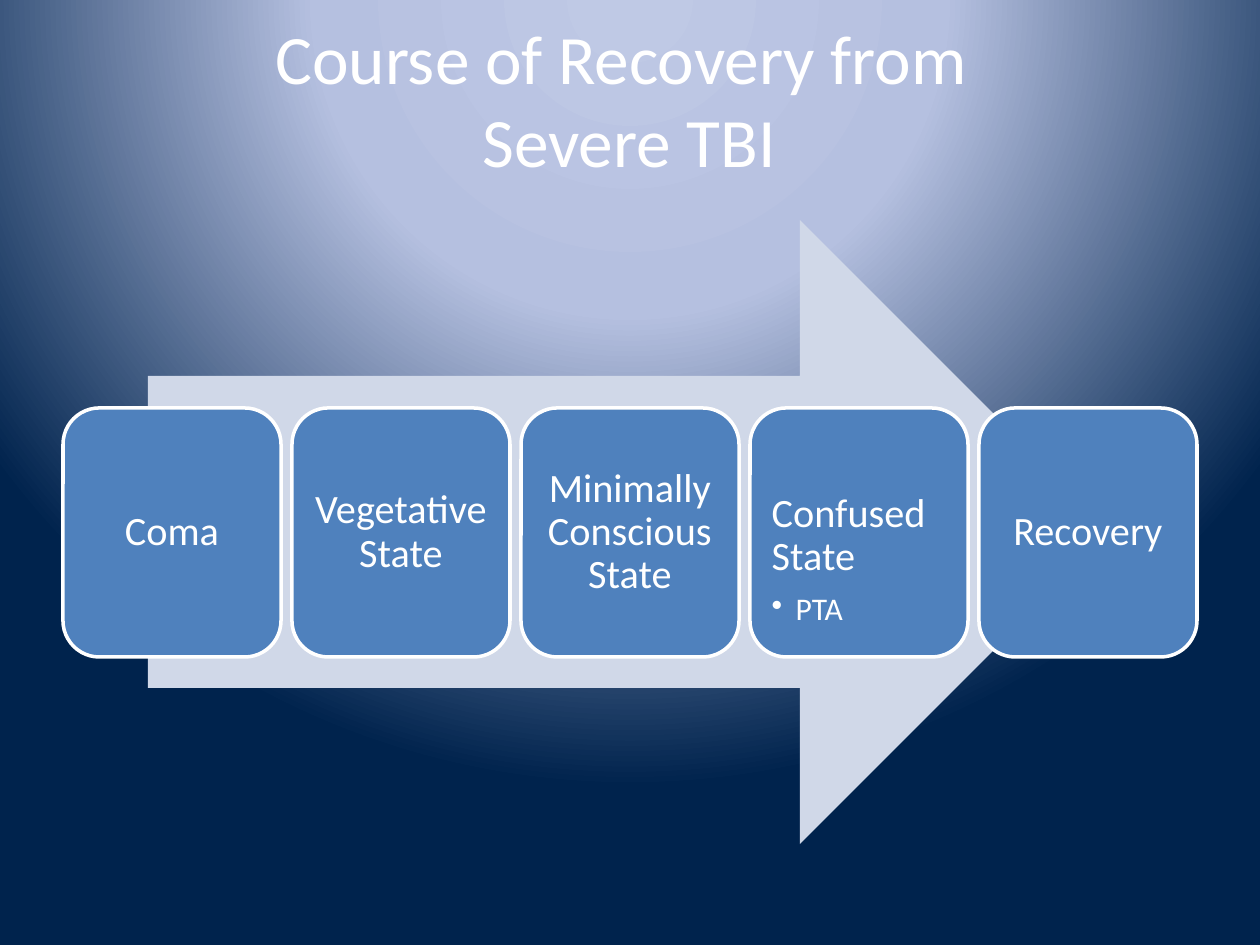
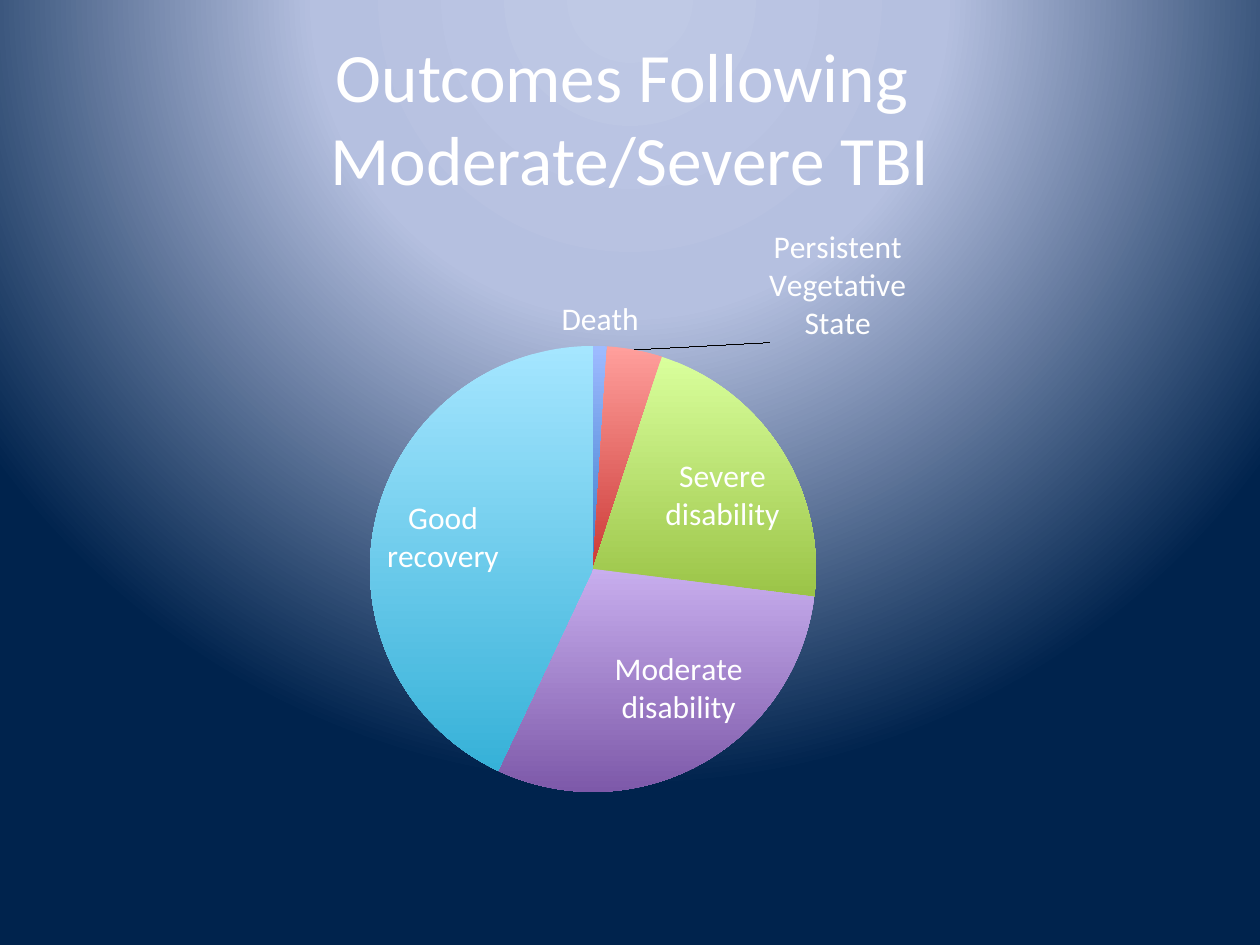
from dataclasses import dataclass

from lxml import etree
from pptx import Presentation
from pptx.chart.data import CategoryChartData
from pptx.dml.color import RGBColor
from pptx.enum.chart import XL_CHART_TYPE, XL_LABEL_POSITION
from pptx.enum.shapes import MSO_SHAPE
from pptx.enum.text import MSO_ANCHOR, MSO_AUTO_SIZE, PP_ALIGN
from pptx.oxml.ns import qn
from pptx.util import Emu, Pt

LEFT, CENTER = PP_ALIGN.LEFT, PP_ALIGN.CENTER
TOP, MIDDLE = MSO_ANCHOR.TOP, MSO_ANCHOR.MIDDLE
FIXED = MSO_AUTO_SIZE.NONE
ARROW, ROUND = MSO_SHAPE.RIGHT_ARROW, MSO_SHAPE.ROUNDED_RECTANGLE
PIE = XL_CHART_TYPE.PIE
BEST, OUTSIDE = XL_LABEL_POSITION.BEST_FIT, XL_LABEL_POSITION.OUTSIDE_END


@dataclass(frozen=True)
class Theme:
    font: str = "Calibri"
    ink: str = "FFFFFF"
    box: str = "4F81BD"
    arrow: str = "D0D8E8"
    glow: tuple = ((0, "BFC9E5"), (40, "B5C0E0"), (100, "00234D"))
    head: float = 39.6
    step: int = 23
    note: int = 18
    edge: int = 2


THEME = Theme()

COURSE = "Course of Recovery from \nSevere TBI"
STEPS = [
    ("Coma", None),
    ("Vegetative State", None),
    ("Minimally Conscious State", None),
    ("Confused State", "PTA"),
    ("Recovery", None),
]
RESULT = "Outcomes Following \nModerate/Severe TBI"
PARTS = [
    ("Death", 1, "9EBBFF", "3A7CCB"),
    ("Vegetative state", 4, "FF9F9C", "CC3A36"),
    ("Severe disability", 22, "D9FF9C", "9BC447"),
    ("Moderate disability", 30, "C8AEEE", "7D59A9"),
    ("Good recovery", 43, "A5E6FF", "36B1D8"),
]
LONG = "Persistent Vegetative State"

SIZE = (1260, 945)
HEADS = [(41, 31, 1176, 134), (63, 38, 1134, 157)]
SHAFT = (148, 220, 964, 624)
ROW = {"x": 63, "y": 408, "w": 218, "h": 249, "gap": 11}
SIDE, PAD, DROP, HANG = 11, 13, 74, 24
CHART = (149, 209, 987, 665)
DISC = (221, 137, 446, 446)
SHIFT = (133, 0)


def px(n):
    return Emu(round(n * 914400 / 126))


def area(box):
    return [px(n) for n in box]


def rgb(code):
    return RGBColor.from_string(code)


def style(font, size):
    font.name, font.size = THEME.font, Pt(size)
    font.color.rgb = rgb(THEME.ink)


def write(frame, text, size, align=CENTER, line=None, after=0, more=False):
    para = frame.add_paragraph() if more else frame.paragraphs[0]
    para.alignment = align
    para.line_spacing = line
    para.space_after = Pt(after)
    for i, part in enumerate(text.split("\n")):
        if i:
            para.add_line_break()
        run = para.add_run()
        run.text = part
        style(run.font, size)
    return para


def paint(master):
    master.background.fill.gradient()
    grad = master.element.find(".//" + qn("p:bg")).find(".//" + qn("a:gradFill"))
    for kid in list(grad):
        grad.remove(kid)
    stops = etree.SubElement(grad, qn("a:gsLst"))
    for place, code in THEME.glow:
        stop = etree.SubElement(stops, qn("a:gs"), pos=str(place * 1000))
        etree.SubElement(stop, qn("a:srgbClr"), val=code)
    path = etree.SubElement(grad, qn("a:path"), path="circle")
    etree.SubElement(path, qn("a:fillToRect"),
                     l="50000", t="-80000", r="50000", b="180000")


def start(deck, text, box):
    slide = deck.slides.add_slide(deck.slide_layouts[5])
    title = slide.shapes.title
    title.left, title.top, title.width, title.height = area(box)
    frame = title.text_frame
    frame.auto_size, frame.vertical_anchor = FIXED, MIDDLE
    write(frame, text, THEME.head)
    return slide


def block(slide, kind, box, fill, edge=None):
    shape = slide.shapes.add_shape(kind, *area(box))
    shape.shadow.inherit = False
    shape.fill.solid()
    shape.fill.fore_color.rgb = rgb(fill)
    if edge:
        shape.line.color.rgb = rgb(edge)
        shape.line.width = Pt(THEME.edge)
    else:
        shape.line.fill.background()
    return shape


def bullet(para):
    para.level = 1
    props = para._p.get_or_add_pPr()
    props.set("marL", str(px(HANG)))
    props.set("indent", str(-px(HANG)))
    etree.SubElement(props, qn("a:buChar"), char="•")


def flow(deck):
    slide = start(deck, COURSE, HEADS[0])
    block(slide, ARROW, SHAFT, THEME.arrow)
    for i, (text, note) in enumerate(STEPS):
        x = ROW["x"] + i * (ROW["w"] + ROW["gap"])
        box = (x, ROW["y"], ROW["w"], ROW["h"])
        frame = block(slide, ROUND, box, THEME.box, THEME.ink).text_frame
        frame.word_wrap = True
        frame.margin_left = frame.margin_right = px(SIDE)
        frame.margin_top = px(DROP if note else PAD)
        frame.margin_bottom = px(PAD)
        frame.vertical_anchor = TOP if note else MIDDLE
        side = LEFT if note else CENTER
        write(frame, text, THEME.step, align=side, line=0.9, after=8)
        if note:
            bullet(write(frame, note, THEME.note, align=LEFT,
                         line=0.9, after=3, more=True))


def layout(vals, inner=False):
    node = etree.Element(qn("c:layout"))
    hand = etree.SubElement(node, qn("c:manualLayout"))
    if inner:
        etree.SubElement(hand, qn("c:layoutTarget"), val="inner")
        for key in ("xMode", "yMode"):
            etree.SubElement(hand, qn("c:" + key), val="edge")
    for key, val, full in zip("xywh", vals, CHART[2:] * 2):
        etree.SubElement(hand, qn("c:" + key), val=str(val / full))
    return node


def named(label):
    label.position = OUTSIDE
    node = label._dLbl
    node.find(qn("c:showVal")).set("val", "0")
    node.find(qn("c:showCatName")).set("val", "1")
    return node


def outcome(deck):
    slide = start(deck, RESULT, HEADS[1])
    data = CategoryChartData()
    data.categories = [part[0] for part in PARTS]
    data.add_series("Series 1", [part[1] for part in PARTS])
    chart = slide.shapes.add_chart(PIE, *area(CHART), data).chart
    chart.has_legend = chart.has_title = False
    style(chart.font, THEME.note)
    plot = chart.plots[0]
    plot.vary_by_categories = True
    zone = chart._chartSpace.chart.plotArea
    old = zone.find(qn("c:layout"))
    if old is not None:
        zone.remove(old)
    zone.insert(0, layout(DISC, inner=True))

    ring = plot.series[0]
    tags = ring.data_labels
    tags.show_category_name, tags.show_value = True, False
    tags.position = BEST
    style(tags.font, THEME.note)
    for i, (_, _, light, dark) in enumerate(PARTS):
        look = ring.points[i].format
        look.fill.gradient()
        look.fill.gradient_angle = 270
        for stop, code in zip(look.fill.gradient_stops, (light, dark)):
            stop.color.rgb = rgb(code)
        look.line.fill.background()

    death, state = (ring.points[i].data_label for i in (0, 1))
    style(death.font, THEME.note)
    named(death)
    write(state.text_frame, LONG, THEME.note)
    named(state).insert(1, layout(SHIFT))


def main():
    deck = Presentation()
    deck.slide_width, deck.slide_height = area(SIZE)
    paint(deck.slide_master)
    flow(deck)
    outcome(deck)
    deck.save("out.pptx")


if __name__ == "__main__":
    main()
